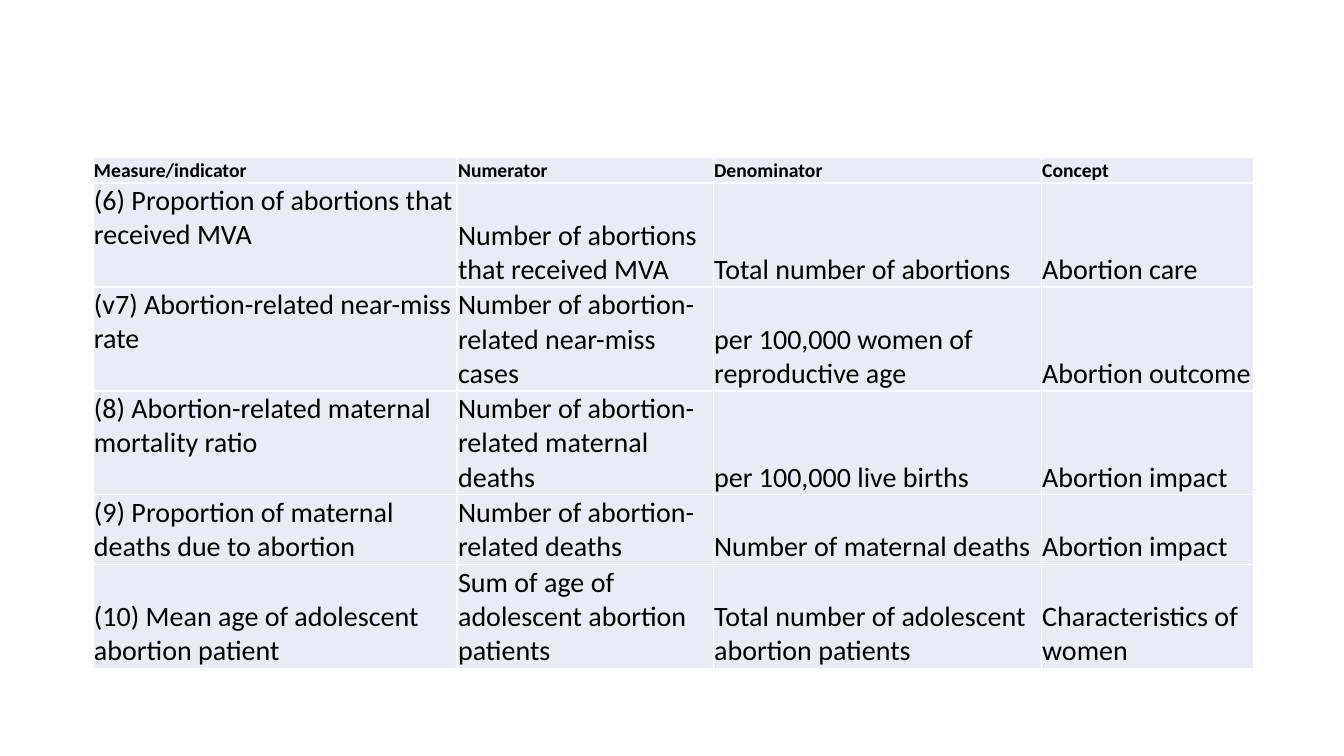
from lxml.etree import SubElement
from pptx import Presentation
from pptx.dml.color import RGBColor
from pptx.enum.text import MSO_ANCHOR
from pptx.oxml.ns import qn
from pptx.util import Emu, Inches, Pt

INDICATORS = [
    ("Measure/indicator", "Numerator", "Denominator", "Concept"),
    ("(6) Proportion of abortions that received MVA",
     "Number of abortions that received MVA",
     "Total number of abortions", "Abortion care"),
    ("(v7) Abortion-related near-miss rate",
     "Number of abortion-related near-miss cases",
     "per 100,000 women of reproductive age", "Abortion outcome"),
    ("(8) Abortion-related maternal mortality ratio",
     "Number of abortion-related maternal deaths",
     "per 100,000 live births", "Abortion impact"),
    ("(9) Proportion of maternal deaths due to abortion",
     "Number of abortion-related deaths",
     "Number of maternal deaths", "Abortion impact"),
    ("(10) Mean age of adolescent abortion patient",
     "Sum of age of adolescent abortion patients",
     "Total number of adolescent abortion patients",
     "Characteristics of women"),
]
COLUMN_WIDTHS = [364, 256, 328, 212]
ROW_HEIGHTS = [26, 104, 104, 103, 69, 104]
TOP_ALIGNED_MEASURES = {1, 2, 3}
LEFT, TOP = 93, 157
FONT = "Calibri"
TEXT, CELL, BORDER = "000000", "E9EBF5", "FFFFFF"


def px(length):
    return Emu(round(length * 914400 / 100.8))


def color(value):
    return RGBColor.from_string(value)


def add_borders(cell):
    properties = cell._tc.get_or_add_tcPr()
    for side in ("a:lnL", "a:lnR", "a:lnT", "a:lnB"):
        border = SubElement(properties, qn(side), w=str(Pt(1)))
        fill = SubElement(border, qn("a:solidFill"))
        SubElement(fill, qn("a:srgbClr"), val=BORDER)


def fill_cell(cell, wording, is_header, anchor):
    add_borders(cell)
    cell.fill.solid()
    cell.fill.fore_color.rgb = color(CELL)
    cell.margin_left = cell.margin_right = cell.margin_top = px(1)
    cell.margin_bottom = 0
    cell.vertical_anchor = anchor
    cell.text_frame.text = wording
    font = cell.text_frame.paragraphs[0].runs[0].font
    font.name = FONT
    font.size = Pt(14 if is_header else 20)
    font.bold = is_header
    font.color.rgb = color(TEXT)


def main():
    deck = Presentation()
    deck.slide_width, deck.slide_height = Inches(13.33), Inches(7.5)
    slide = deck.slides.add_slide(deck.slide_layouts[6])
    indicators = slide.shapes.add_table(
        len(ROW_HEIGHTS), len(COLUMN_WIDTHS), px(LEFT), px(TOP),
        px(sum(COLUMN_WIDTHS)), px(sum(ROW_HEIGHTS))).table
    indicators.horz_banding = False
    for column, width in zip(indicators.columns, COLUMN_WIDTHS):
        column.width = px(width)
    for row, height in zip(indicators.rows, ROW_HEIGHTS):
        row.height = px(height)
    for r, indicator in enumerate(INDICATORS):
        for c, wording in enumerate(indicator):
            at_top = c == 0 and r in TOP_ALIGNED_MEASURES
            anchor = MSO_ANCHOR.TOP if at_top else MSO_ANCHOR.BOTTOM
            fill_cell(indicators.cell(r, c), wording, r == 0, anchor)
    deck.save("out.pptx")


if __name__ == "__main__":
    main()
